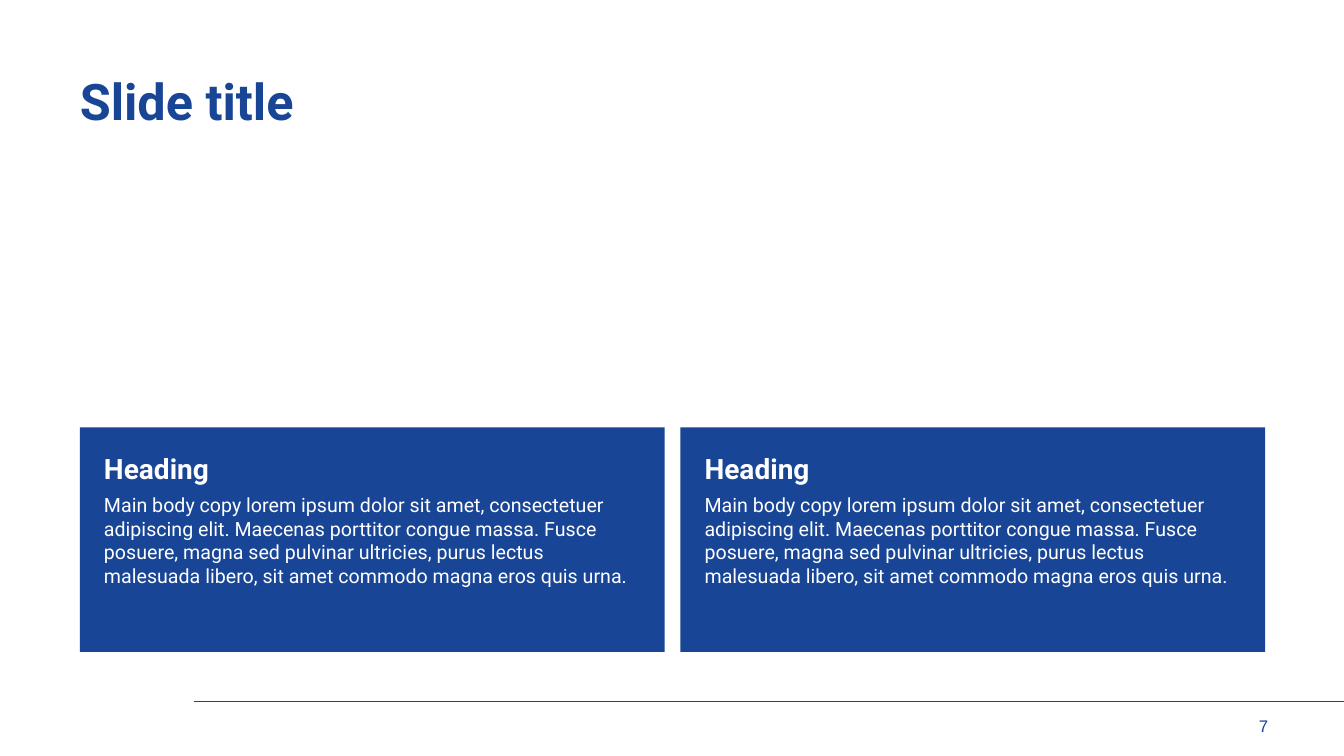
"""Build a title slide body with two heading-and-copy cards."""
from dataclasses import dataclass

import pptx
import pptx.dml.color
import pptx.enum.shapes
import pptx.enum.text
import pptx.oxml.ns
import pptx.shapes.autoshape
import pptx.slide
import pptx.text.text
import pptx.util
from lxml import etree

EMU_PER_PX = 9525
BLUE = pptx.dml.color.RGBColor(0x18, 0x45, 0x96)
WHITE = pptx.dml.color.RGBColor(0xFF, 0xFF, 0xFF)
SLIDE_WIDTH, SLIDE_HEIGHT = 1280, 720
MARGIN = 76
CARD_TOP, CARD_WIDTH, CARD_HEIGHT = 407, 557, 214
CARD_GAP, CARD_INSET = 15, 23
BODY_COPY = (
    "Main body copy lorem ipsum dolor sit amet, consectetuer adipiscing elit. "
    "Maecenas porttitor congue massa. Fusce posuere, magna sed pulvinar ultricies, "
    "purus lectus malesuada libero, sit amet commodo magna eros quis urna."
)


@dataclass(frozen=True)
class Card:
    """Wording of one card."""

    heading: str
    body: str


CARDS = [Card("Heading", BODY_COPY), Card("Heading", BODY_COPY)]


def px(length: int) -> pptx.util.Emu:
    """Convert whole pixels to EMU."""
    return pptx.util.Emu(length * EMU_PER_PX)


def prepare_frame(
    frame: pptx.text.text.TextFrame,
    inset: int = 0,
    anchor: pptx.enum.text.MSO_ANCHOR = pptx.enum.text.MSO_ANCHOR.TOP,
) -> None:
    """Set wrapping, anchor and equal insets on a text frame."""
    frame.word_wrap = True
    frame.auto_size = pptx.enum.text.MSO_AUTO_SIZE.NONE
    frame.vertical_anchor = anchor
    frame.margin_left = frame.margin_right = px(inset)
    frame.margin_top = frame.margin_bottom = px(inset)


def write_text(
    paragraph: pptx.text.text._Paragraph,
    text: str,
    *,
    size: int,
    color: pptx.dml.color.RGBColor,
    font: str = "Roboto",
    bold: bool = False,
    align: pptx.enum.text.PP_ALIGN = pptx.enum.text.PP_ALIGN.LEFT,
    line_spacing: float = 1.0,
    space_before: float = 0,
) -> None:
    """Write one formatted run into a paragraph."""
    paragraph.alignment = align
    paragraph.line_spacing = line_spacing
    paragraph.space_before = pptx.util.Pt(space_before)
    run = paragraph.add_run()
    run.text = text
    run.font.name = font
    run.font.size = pptx.util.Pt(size)
    run.font.bold = bold
    run.font.color.rgb = color


def draw_title(slide: pptx.slide.Slide) -> None:
    """Place and format the title placeholder."""
    title = slide.shapes.title
    title.left, title.top = px(MARGIN), px(MARGIN)
    title.width, title.height = px(1129), px(60)
    prepare_frame(title.text_frame)
    write_text(title.text_frame.paragraphs[0], "Slide title",
               size=36, color=BLUE, bold=True, line_spacing=0.85)


def draw_footer(slide: pptx.slide.Slide) -> None:
    """Draw the footer rule and the page number."""
    rule = slide.shapes.add_connector(
        pptx.enum.shapes.MSO_CONNECTOR.STRAIGHT,
        px(185), px(668), px(SLIDE_WIDTH), px(668))
    rule.line.color.rgb = BLUE
    rule.line.width = pptx.util.Pt(0.75)
    etree.SubElement(rule._element.spPr, pptx.oxml.ns.qn("a:effectLst"))
    page_number = slide.shapes.add_textbox(px(1181), px(682), px(27), px(20))
    prepare_frame(page_number.text_frame, anchor=pptx.enum.text.MSO_ANCHOR.MIDDLE)
    write_text(page_number.text_frame.paragraphs[0], "7", size=12, color=BLUE,
               font="Arial", align=pptx.enum.text.PP_ALIGN.RIGHT, line_spacing=0.9)


def draw_card(slide: pptx.slide.Slide, card: Card, left: int) -> None:
    """Draw one filled card with its heading and body copy."""
    shape = slide.shapes.add_shape(
        pptx.enum.shapes.MSO_SHAPE.RECTANGLE,
        px(left), px(CARD_TOP), px(CARD_WIDTH), px(CARD_HEIGHT))
    shape.shadow.inherit = False
    shape.fill.solid()
    shape.fill.fore_color.rgb = BLUE
    shape.line.fill.background()
    frame = shape.text_frame
    prepare_frame(frame, inset=CARD_INSET)
    write_text(frame.paragraphs[0], card.heading, size=20, color=WHITE, bold=True)
    write_text(frame.add_paragraph(), card.body, size=14, color=WHITE, space_before=5.7)


def main() -> None:
    """Build and save the presentation."""
    presentation = pptx.Presentation()
    presentation.slide_width = px(SLIDE_WIDTH)
    presentation.slide_height = px(SLIDE_HEIGHT)
    slide = presentation.slides.add_slide(presentation.slide_layouts[5])
    slide.background.fill.solid()
    slide.background.fill.fore_color.rgb = WHITE
    draw_footer(slide)
    draw_title(slide)
    for index, card in enumerate(CARDS):
        draw_card(slide, card, MARGIN + index * (CARD_WIDTH + CARD_GAP))
    presentation.save("out.pptx")


if __name__ == "__main__":
    main()
